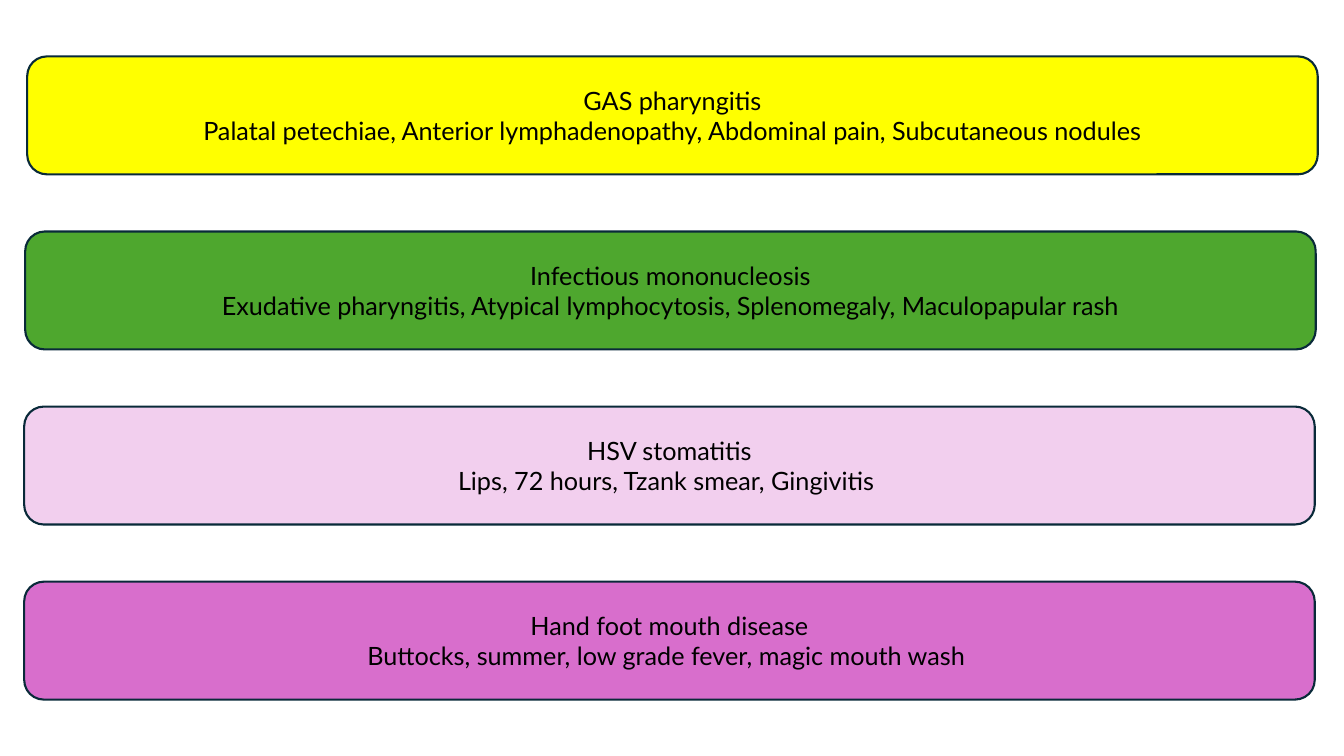
import pptx
import pptx.util
import pptx.dml.color
import pptx.enum.shapes
import pptx.enum.text

Inches = pptx.util.Inches
RGBColor = pptx.dml.color.RGBColor

YELLOW = RGBColor(0xFF, 0xFF, 0x00)
GREEN = RGBColor(0x4E, 0xA7, 0x2E)
PALE_PINK = RGBColor(0xF2, 0xCF, 0xEE)
ORCHID = RGBColor(0xD8, 0x6E, 0xCC)
OUTLINE = RGBColor(0x09, 0x2A, 0x39)
BLACK = RGBColor(0x00, 0x00, 0x00)

FONT_FORMAT = {"name": "Lato", "size": pptx.util.Pt(18)}
FIRST_TOP = 0.56
ROW_STEP = 1.737
BAR_WIDTH = 12.8
BAR_HEIGHT = 1.17

# left edge, fill, disease, findings
DISEASES = [
    (0.27, YELLOW, "GAS pharyngitis",
     "Palatal petechiae, Anterior lymphadenopathy, Abdominal pain, Subcutaneous nodules"),
    (0.25, GREEN, "Infectious mononucleosis",
     "Exudative pharyngitis, Atypical lymphocytosis, Splenomegaly, Maculopapular rash"),
    (0.24, PALE_PINK, "HSV stomatitis",
     "Lips, 72 hours, Tzank smear, Gingivitis "),
    (0.24, ORCHID, "Hand foot mouth disease",
     "Buttocks, summer, low grade fever, magic mouth wash "),
]

presentation = pptx.Presentation()
presentation.slide_width = Inches(13.33)
presentation.slide_height = Inches(7.5)
slide = presentation.slides.add_slide(presentation.slide_layouts[6])

for row, (left, fill, disease, findings) in enumerate(DISEASES):
    shape = slide.shapes.add_shape(
        pptx.enum.shapes.MSO_SHAPE.ROUNDED_RECTANGLE,
        Inches(left), Inches(FIRST_TOP + row * ROW_STEP),
        Inches(BAR_WIDTH), Inches(BAR_HEIGHT))
    shape.shadow.inherit = False
    shape.fill.solid()
    shape.fill.fore_color.rgb = fill
    shape.line.color.rgb = OUTLINE
    shape.line.width = pptx.util.Pt(1.5)

    text_frame = shape.text_frame
    text_frame.word_wrap = True
    text_frame.vertical_anchor = pptx.enum.text.MSO_ANCHOR.MIDDLE
    text_frame.text = f"{disease}\n{findings}"
    for paragraph in text_frame.paragraphs:
        paragraph.alignment = pptx.enum.text.PP_ALIGN.CENTER
        font = paragraph.runs[0].font
        for attribute, value in FONT_FORMAT.items():
            setattr(font, attribute, value)
        font.color.rgb = BLACK

presentation.save("out.pptx")
